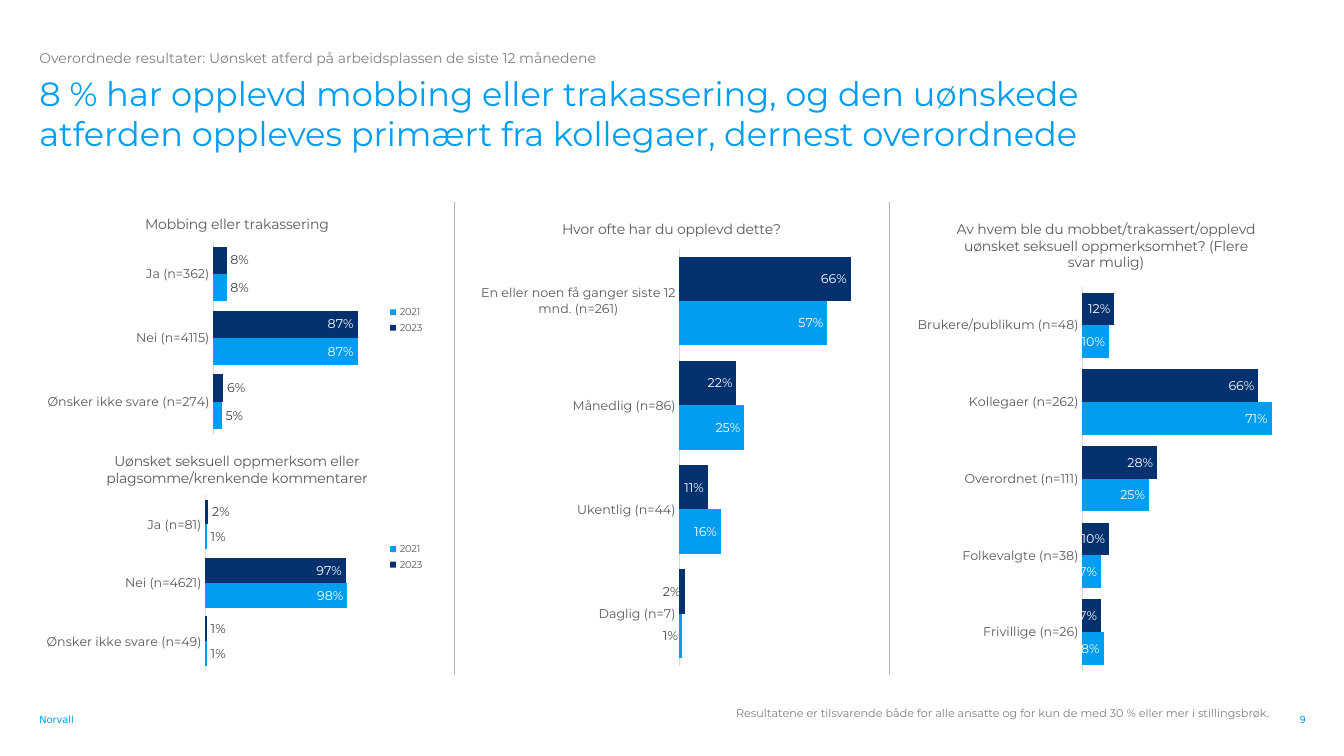
from dataclasses import dataclass

from lxml.etree import SubElement
from pptx import Presentation
from pptx.chart.data import CategoryChartData
from pptx.dml.color import RGBColor
from pptx.enum.chart import XL_CHART_TYPE, XL_LABEL_POSITION, XL_LEGEND_POSITION, XL_TICK_MARK
from pptx.enum.shapes import MSO_CONNECTOR
from pptx.enum.text import MSO_ANCHOR, MSO_AUTO_SIZE, PP_ALIGN
from pptx.oxml import parse_xml
from pptx.oxml.ns import nsdecls, qn
from pptx.util import Inches, Pt

BLUE = RGBColor(0x00, 0x9D, 0xF0)
NAVY = RGBColor(0x05, 0x32, 0x6E)
WHITE = RGBColor(0xFF, 0xFF, 0xFF)
BLACK = RGBColor(0x00, 0x00, 0x00)
DARK_GREY = RGBColor(0x40, 0x40, 0x40)
TEXT_GREY = RGBColor(0x59, 0x59, 0x59)
MID_GREY = RGBColor(0x80, 0x80, 0x80)
RULE_GREY = RGBColor(0xB1, 0xB2, 0xB3)
AXIS_GREY = RGBColor(0xD9, 0xD9, 0xD9)
BODY_FONT = "Montserrat"
FOOTER_FONT = "DejaVu Sans"

LEFT, TOP = 0.39, 2
COLUMN_WIDTH, COLUMN_PITCH, COLUMN_HEIGHT = 3.92, 4.31, 4.7


@dataclass
class Survey:
    title: str
    categories: list
    series: dict
    plot: tuple
    maximum: float
    legend: bool = False
    exception: int | None = None


BULLYING = Survey(
    "Mobbing eller trakassering",
    ["Ja (n=362)", "Nei (n=4115)", "Ønsker ikke svare (n=274)"],
    {"2023": [0.08, 0.87, 0.06], "2021": [0.08, 0.87, 0.05]},
    (0.44, 0.17, 0.42, 0.81), 1, legend=True, exception=1)
ATTENTION = Survey(
    "Uønsket seksuell oppmerksom eller plagsomme/krenkende kommentarer",
    ["Ja (n=81)", "Nei (n=4621)", "Ønsker ikke svare (n=49)"],
    {"2023": [0.02, 0.97, 0.01], "2021": [0.01, 0.98, 0.01]},
    (0.42, 0.24, 0.44, 0.74), 1.2, legend=True, exception=1)
FREQUENCY = Survey(
    "Hvor ofte har du opplevd dette?",
    ["En eller noen få ganger siste 12 mnd. (n=261)", "Månedlig (n=86)",
     "Ukentlig (n=44)", "Daglig (n=7)"],
    {"Series 1": [0.66, 0.22, 0.11, 0.02], "Series 2": [0.57, 0.25, 0.16, 0.01]},
    (0.52, 0.1, 0.46, 0.88), 0.7, exception=3)
OFFENDERS = Survey(
    "Av hvem ble du mobbet/trakassert/opplevd uønsket seksuell oppmerksomhet? (Flere svar mulig)",
    ["Brukere/publikum (n=48)", "Kollegaer (n=262)", "Overordnet (n=111)",
     "Folkevalgte (n=38)", "Frivillige (n=26)"],
    {"Series 1": [0.12, 0.66, 0.28, 0.1, 0.07], "Series 2": [0.1, 0.71, 0.25, 0.07, 0.08]},
    (0.44, 0.18, 0.54, 0.81), 0.8)


def style_font(font, size, color, name=BODY_FONT):
    font.size = Pt(size)
    font.name = name
    font.bold = False
    font.color.rgb = color


def fill_text(shape, text, size, color, name=BODY_FONT, align=PP_ALIGN.LEFT, anchor=MSO_ANCHOR.TOP):
    frame = shape.text_frame
    frame.text = text
    frame.word_wrap = True
    frame.auto_size = MSO_AUTO_SIZE.NONE
    frame.vertical_anchor = anchor
    frame.margin_left = frame.margin_right = frame.margin_top = frame.margin_bottom = 0
    para = frame.paragraphs[0]
    para.alignment = align
    style_font(para.runs[0].font, size, color, name)


def add_text(page, box, text, size, color, **options):
    shape = page.shapes.add_textbox(*map(Inches, box))
    fill_text(shape, text, size, color, **options)


def add_header(page, left, top, width):
    add_text(page, (left, top, 7.48, 0.17),
             "Overordnede resultater: Uønsket atferd på arbeidsplassen de siste 12 månedene", 10, MID_GREY)
    title = page.shapes.title
    title.left, title.top = Inches(left), Inches(top + 0.23)
    title.width, title.height = Inches(width), Inches(1.02)
    fill_text(title, "8 % har opplevd mobbing eller trakassering, og den uønskede atferden "
              "oppleves primært fra kollegaer, dernest overordnede", 24, BLUE)


def add_footer(page, left, top, right):
    add_text(page, (left, top, 0.85, 0.24), "Norvall", 7, BLUE,
             name=FOOTER_FONT, anchor=MSO_ANCHOR.BOTTOM)
    add_text(page, (right - 8.58, top + 0.05, 8.23, 0.13),
             "Resultatene er tilsvarende både for alle ansatte og for kun de med 30 % "
             "eller mer i stillingsbrøk.", 8, MID_GREY, align=PP_ALIGN.RIGHT)
    add_text(page, (right - 0.69, top + 0.12, 0.69, 0.12), "9", 7, BLUE,
             name=FOOTER_FONT, align=PP_ALIGN.RIGHT, anchor=MSO_ANCHOR.BOTTOM)


def add_divider(page, x, top, height):
    line = page.shapes.add_connector(
        MSO_CONNECTOR.STRAIGHT, Inches(x), Inches(top), Inches(x), Inches(top + height))
    line.line.color.rgb = RULE_GREY
    line.line.width = Pt(0.5)
    SubElement(line.element.spPr, qn("a:effectLst"))


def place_plot(chart, plot):
    x, y, width, height = plot
    area = chart.element.xpath("c:chart/c:plotArea")[0]
    for layout in area.xpath("c:layout"):
        area.remove(layout)
    area.insert(0, parse_xml(
        f'<c:layout {nsdecls("c")}><c:manualLayout><c:layoutTarget val="inner"/>'
        f'<c:xMode val="edge"/><c:yMode val="edge"/><c:x val="{x}"/><c:y val="{y}"/>'
        f'<c:w val="{width}"/><c:h val="{height}"/></c:manualLayout></c:layout>'))


def style_series(series, color, survey):
    inside = (XL_LABEL_POSITION.INSIDE_END, WHITE)
    outside = (XL_LABEL_POSITION.OUTSIDE_END, DARK_GREY)
    dark_inside = (XL_LABEL_POSITION.INSIDE_END, DARK_GREY)
    usual, special = (outside, inside) if survey.legend else (inside, dark_inside)
    series.format.fill.solid()
    series.format.fill.fore_color.rgb = color
    series.invert_if_negative = False
    labels = series.data_labels
    labels.show_value = True
    labels.number_format = "0%"
    labels.number_format_is_linked = False
    labels.position = usual[0]
    style_font(labels.font, 9, usual[1])
    if survey.exception is not None:
        label = series.points[survey.exception].data_label
        style_font(label.font, 9, special[1])
        label.position = special[0]


def add_survey_chart(page, box, survey):
    data = CategoryChartData(number_format="0%")
    data.categories = survey.categories
    for name, values in survey.series.items():
        data.add_series(name, values)
    chart = page.shapes.add_chart(XL_CHART_TYPE.BAR_CLUSTERED, *map(Inches, box), data).chart
    style_font(chart.font, 10, BLACK)

    chart.has_title = True
    chart.chart_title.include_in_layout = False
    para = chart.chart_title.text_frame.paragraphs[0]
    para.text = survey.title
    style_font(para.runs[0].font, 10, TEXT_GREY)

    chart.has_legend = survey.legend
    if survey.legend:
        chart.legend.position = XL_LEGEND_POSITION.RIGHT
        chart.legend.include_in_layout = False
        style_font(chart.legend.font, 7, TEXT_GREY)

    axis = chart.category_axis
    axis.reverse_order = True
    axis.major_tick_mark = axis.minor_tick_mark = XL_TICK_MARK.NONE
    axis.format.line.color.rgb = AXIS_GREY
    axis.format.line.width = Pt(0.75)
    style_font(axis.tick_labels.font, 9, TEXT_GREY)
    scale = chart.value_axis
    scale.minimum_scale, scale.maximum_scale = 0, survey.maximum
    scale.has_major_gridlines = False
    scale.visible = False

    bars = chart.plots[0]
    bars.gap_width = 35
    bars.overlap = 0
    bars.vary_by_categories = False
    for series, color in zip(bars.series, (NAVY, BLUE)):
        style_series(series, color, survey)
    place_plot(chart, survey.plot)


def add_column(page, box, surveys):
    left, top, width, height = box
    share = height / len(surveys)
    for row, survey in enumerate(surveys):
        add_survey_chart(page, (left, top + row * share, width, share), survey)


def main():
    deck = Presentation()
    deck.slide_width, deck.slide_height = Inches(13.33), Inches(7.5)
    page = deck.slides.add_slide(deck.slide_layouts[5])
    add_header(page, LEFT, 0.49, 11.46)
    for index, surveys in enumerate([(BULLYING, ATTENTION), (FREQUENCY,), (OFFENDERS,)]):
        left = LEFT + index * COLUMN_PITCH
        if index:
            add_divider(page, left - 0.19, TOP, COLUMN_HEIGHT)
        add_column(page, (left, TOP, COLUMN_WIDTH, COLUMN_HEIGHT), surveys)
    add_footer(page, LEFT, 6.96, 12.95)
    deck.save("out.pptx")


if __name__ == "__main__":
    main()
